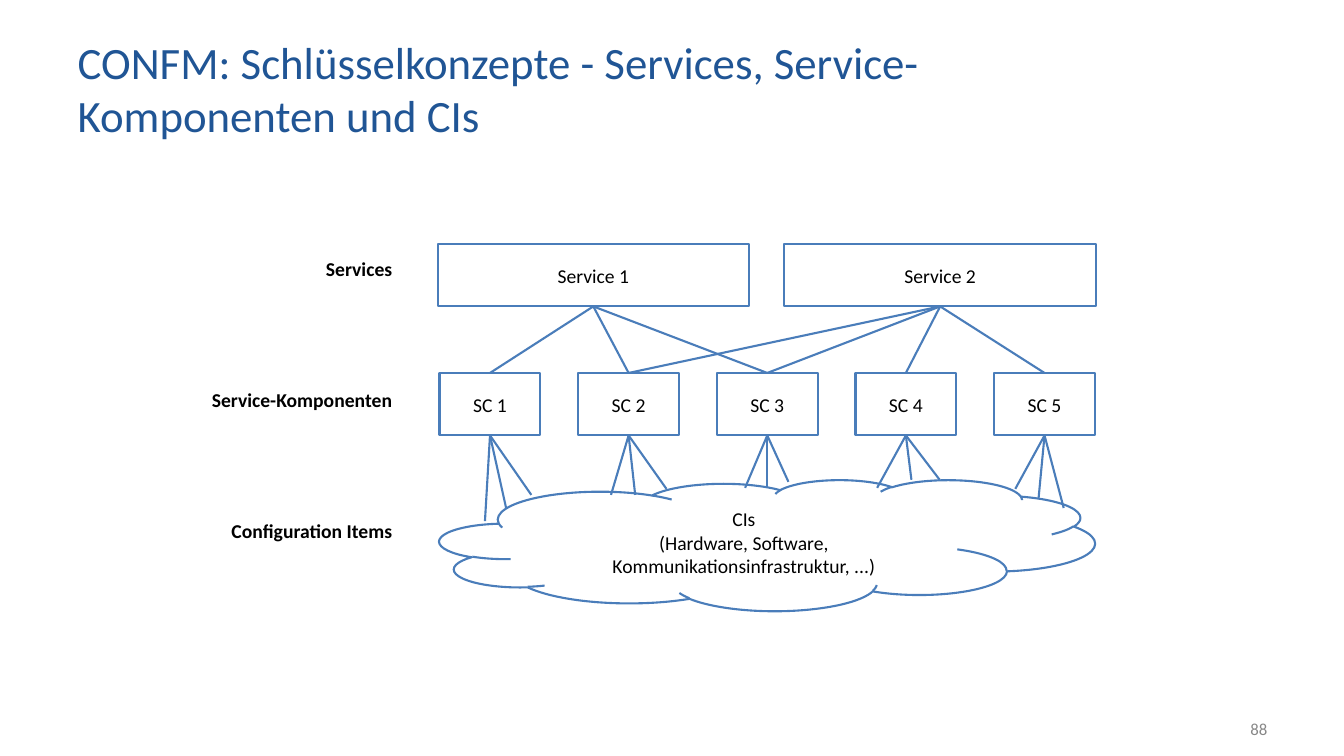
from pptx import Presentation
from pptx.dml.color import RGBColor
from pptx.enum.shapes import MSO_CONNECTOR, MSO_SHAPE
from pptx.enum.text import MSO_ANCHOR, MSO_AUTO_SIZE, PP_ALIGN
from pptx.oxml.ns import qn
from pptx.util import Inches, Pt
from lxml import etree

RECT, CLOUD = MSO_SHAPE.RECTANGLE, MSO_SHAPE.CLOUD
LINE = MSO_CONNECTOR.STRAIGHT
LEFT, MID, RIGHT = PP_ALIGN.LEFT, PP_ALIGN.CENTER, PP_ALIGN.RIGHT
TOP, CENTER = MSO_ANCHOR.TOP, MSO_ANCHOR.MIDDLE
FIXED = MSO_AUTO_SIZE.NONE


def color(code):
    """Turn a hex string into a colour."""
    return RGBColor.from_string(code)


class Sketch:
    """Hold the style and the current slide."""

    font = "Calibri"
    blue = "4A7DBA"
    black = "000000"
    width = 1.5

    def __init__(self, slide):
        """Keep the slide to draw on."""
        self.slide = slide

    def letter(self, shape, text, size, tint, align, anchor, bold=False):
        """Put styled text into a shape."""
        frame = shape.text_frame
        frame.text = text
        frame.word_wrap = True
        frame.auto_size = FIXED
        frame.vertical_anchor = anchor
        for para in frame.paragraphs:
            para.alignment = align
            for run in para.runs:
                run.font.name = self.font
                run.font.size = Pt(size)
                run.font.bold = bold
                run.font.color.rgb = color(tint)

    def title(self, text, box):
        """Move and fill the title placeholder."""
        shape = self.slide.shapes.title
        shape.left, shape.top, shape.width, shape.height = map(Inches, box)
        self.letter(shape, text, 32, "205595", LEFT, CENTER)

    def label(self, text, box, size=14, tint=black, anchor=TOP, bold=True):
        """Add a right-aligned text box."""
        shape = self.slide.shapes.add_textbox(*map(Inches, box))
        self.letter(shape, text, size, tint, RIGHT, anchor, bold)

    def node(self, text, box, kind=RECT):
        """Add an outlined shape with centred text."""
        shape = self.slide.shapes.add_shape(kind, *map(Inches, box))
        shape.shadow.inherit = False
        shape.fill.background()
        shape.line.color.rgb = color(self.blue)
        shape.line.width = Pt(self.width)
        self.letter(shape, text, 14, self.black, MID, CENTER)

    def link(self, start, end):
        """Add a straight line between two points."""
        line = self.slide.shapes.add_connector(LINE, *map(Inches, start + end))
        line.line.color.rgb = color(self.blue)
        line.line.width = Pt(self.width)
        etree.SubElement(line._element.spPr, qn("a:effectLst"))


def main():
    """Build the slide and save it."""
    deck = Presentation()
    deck.slide_width, deck.slide_height = Inches(13.33), Inches(7.5)
    art = Sketch(deck.slides.add_slide(deck.slide_layouts[5]))

    art.title("CONFM: Schlüsselkonzepte - Services, Service-Komponenten und CIs",
              (0.67, 0.3, 9.91, 1.15))
    art.label("88", (9.56, 7.03, 3.11, 0.4), 12, "888888", CENTER, False)
    art.node("CIs\n(Hardware, Software, Kommunikationsinfrastruktur, ...)",
             (4.36, 4.76, 6.5, 1.3), CLOUD)

    high = 0.62
    top, wide = 2.42, 3.09
    row, side = 3.7, 1
    lefts = [4.34, 7.78]
    parts = [4.36 + 5.5 / 4 * i for i in range(5)]
    mids = [left + side / 2 for left in parts]

    for i, left in enumerate(lefts, 1):
        art.node(f"Service {i}", (left, top, wide, high))
    for i, left in enumerate(parts, 1):
        art.node(f"SC {i}", (left, row, side, high))

    uses = [(0, 1, 2), (1, 2, 3, 4)]
    for left, group in zip(lefts, uses):
        for i in group:
            art.link((mids[i], row), (left + wide / 2, top + high))

    items = [
        [(4.81, 5.17), (5.02, 5.04), (5.27, 4.91)],
        [(6.06, 4.91), (6.3, 4.91), (6.61, 4.85)],
        [(7.39, 4.84), (7.61, 4.84), (7.82, 4.78)],
        [(8.7, 4.84), (9.04, 4.76), (9.32, 4.76)],
        [(10.07, 4.85), (10.3, 4.95), (10.55, 5.04)],
    ]
    for mid, ends in zip(mids, items):
        for end in ends:
            art.link((mid, row + high), end)

    names = ["Services", "Service-Komponenten", "Configuration Items"]
    for i, name in enumerate(names):
        art.label(name, (1.79, 2.5 + 1.3 * i, 2.2, 0.34))

    deck.save("out.pptx")


if __name__ == "__main__":
    main()
